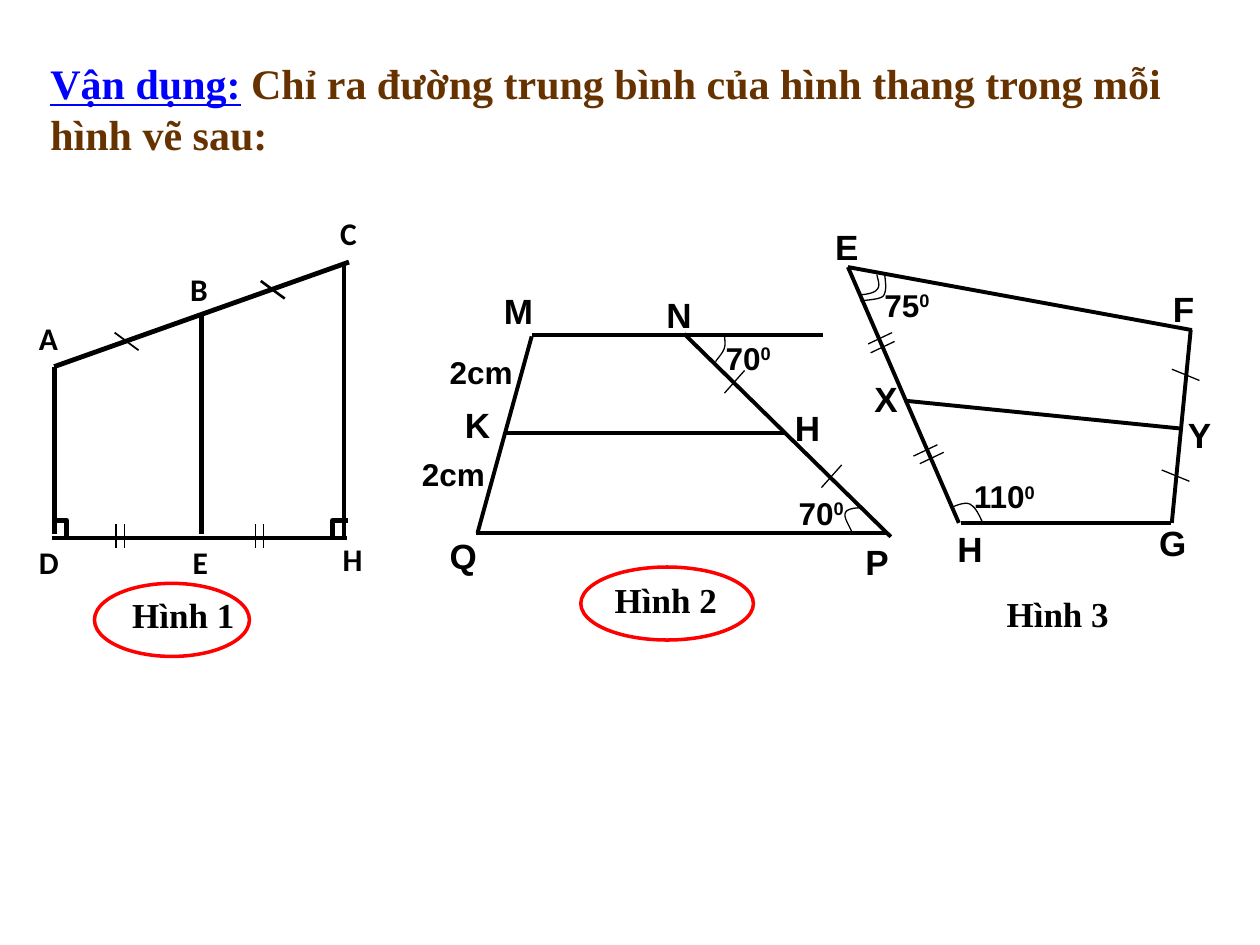
from pptx import Presentation
from pptx.dml.color import RGBColor as RGB
from pptx.enum.shapes import MSO_CONNECTOR as CONN, MSO_SHAPE as SHAPE
from pptx.enum.text import MSO_ANCHOR as ANCHOR, MSO_AUTO_SIZE as FIT, PP_ALIGN as ALIGN
from pptx.oxml.ns import qn
from pptx.util import Inches, Pt
from lxml import etree

C = {"ink": "000000", "blue": "0000FF", "brown": "663300", "red": "FF0000"}

prs = Presentation()
prs.slide_width, prs.slide_height = Inches(10), Inches(7.5)
col, row = prs.slide_width / 10, prs.slide_height / 7.5
s = prs.slides.add_slide(prs.slide_layouts[5])


def add_text(sp, text, size=20, font="Arial", color="ink", underline=None, sup=False):
    tf = sp.text_frame
    tf.word_wrap = True
    tf.auto_size = FIT.NONE
    tf.vertical_anchor = ANCHOR.TOP
    p = tf.paragraphs[0]
    p.alignment = ALIGN.LEFT
    r = p.add_run()
    r.text = text
    f = r.font
    f.name, f.size, f.bold, f.underline = font, Pt(size), True, underline
    f.color.rgb = RGB.from_string(C[color])
    if sup:
        r._r.get_or_add_rPr().set("baseline", "30000")


def add_path(points, width):
    pts = [(round(x * col), round(y * row)) for x, y in points]
    fb = s.shapes.build_freeform(*pts[0], scale=1.0)
    fb.add_line_segments(pts[1:], close=False)
    sp = fb.convert_to_shape()
    sp.shadow.inherit = False
    sp.fill.background()
    sp.line.color.rgb = RGB.from_string(C["ink"])
    sp.line.width = Pt(width)


title = s.shapes.title
title.left, title.top = round(0.3 * col), round(0.41 * row)
title.width, title.height = round(9.05 * col), round(0.91 * row)
add_text(title, "Vận dụng:", size=24, font="Times New Roman", color="blue", underline=True)
add_text(title, " Chỉ ra đường trung bình của hình thang trong mỗi hình vẽ sau:",
         size=24, font="Times New Roman", color="brown")

lines = {
    2.75: [(0.41, 4.27, 2.75, 4.27), (1.6, 2.49, 1.6, 4.24), (0.43, 4.24, 0.43, 2.91),
           (2.73, 4.26, 2.73, 2.09), (0.43, 2.91, 2.77, 2.08)],
    2.25: [(4.22, 2.66, 6.53, 2.66), (4.22, 2.67, 3.79, 4.23), (3.78, 4.23, 7.03, 4.23),
           (5.43, 2.65, 7.07, 4.26), (4.01, 3.44, 6.22, 3.44),
           (7.63, 4.15, 9.29, 4.15), (7.61, 4.15, 6.73, 2.12), (9.3, 4.15, 9.45, 2.62),
           (6.73, 2.12, 9.46, 2.62), (7.18, 3.18, 9.36, 3.4)],
    1.5: [(2.07, 2.23, 2.26, 2.37)],
    1: [(0.91, 2.64, 1.1, 2.78)],
    0.75: [(x, 4.16, x, 4.35) for x in (0.92, 0.99, 2.03, 2.09)]
    + [(x, y, x - 0.16, y + 0.18) for x, y in ((5.91, 2.94), (6.68, 3.69))]
    + [(x, y, x - 0.19, y + 0.09)
       for x, y in ((7.08, 2.64), (7.1, 2.71), (7.44, 3.53), (7.49, 3.59))]
    + [(x, y, x + 0.22, y + 0.09) for x, y in ((9.3, 2.93), (9.22, 3.73))],
}
for width, group in lines.items():
    for x1, y1, x2, y2 in group:
        sp = s.shapes.add_connector(CONN.STRAIGHT, round(x1 * col), round(y1 * row),
                                    round(x2 * col), round(y2 * row))
        sp.line.color.rgb = RGB.from_string(C["ink"])
        sp.line.width = Pt(width)
        etree.SubElement(sp._element.spPr, qn("a:effectLst"))

add_path([(0.41, 4.13), (0.53, 4.13), (0.53, 4.25)], 2.75)
add_path([(2.64, 4.25), (2.64, 4.13), (2.76, 4.13)], 2.75)

arcs = [
    [(5.75, 2.65), (5.75, 2.69), (5.76, 2.73), (5.75, 2.76), (5.74, 2.8), (5.69, 2.85), (5.68, 2.87)],
    [(6.84, 4.03), (6.78, 4.03), (6.72, 4.04), (6.71, 4.07), (6.69, 4.1), (6.75, 4.19), (6.76, 4.22)],
    [(7.57, 4.02), (7.62, 4), (7.68, 3.98), (7.71, 4.01), (7.75, 4.03), (7.79, 4.13), (7.8, 4.15)],
    [(6.96, 2.18), (6.97, 2.23), (6.99, 2.27), (6.96, 2.3), (6.94, 2.33), (6.85, 2.34), (6.83, 2.34)],
    [(7.02, 2.17), (7.03, 2.24), (7.04, 2.31), (7.01, 2.35), (6.98, 2.38), (6.86, 2.38), (6.83, 2.39)],
]
steps = 10
for arc in arcs:
    pts = [arc[0]]
    for i in (0, 3):
        for n in range(1, steps + 1):
            t = n / steps
            weights = ((1 - t) ** 3, 3 * t * (1 - t) ** 2, 3 * t * t * (1 - t), t ** 3)
            pts.append(tuple(sum(w * pt[k] for w, pt in zip(weights, arc[i:i + 4]))
                             for k in (0, 1)))
    add_path(pts, 0.75)

labels = [
    ("Calibri", 18, 0.38, 0.4, [
        ("A", 0.21, 2.48), ("B", 1.41, 2.09), ("C", 2.6, 1.65),
        ("H", 2.62, 4.24), ("E", 1.43, 4.26), ("D", 0.21, 4.26)]),
    ("Arial", 20, 0.62, 0.43, [
        ("M", 3.9, 2.25), ("N", 5.19, 2.28), ("P", 6.77, 4.24),
        ("Q", 3.47, 4.19), ("K", 3.59, 3.15), ("H", 6.21, 3.18)]),
    ("Arial", 20, 0.72, 0.43, [
        ("E", 6.53, 1.74), ("F", 9.21, 2.23), ("G", 9.1, 4.09),
        ("H", 7.5, 4.14), ("X", 6.84, 2.95), ("Y", 9.33, 3.23)]),
    ("Arial", 18, 0.88, 0.4, [("2cm", 3.47, 2.75), ("2cm", 3.25, 3.56)]),
    ("Times New Roman", 20, 1.28, 0.43, [
        ("Hình 1", 0.95, 4.66), ("Hình 2", 4.78, 4.54), ("Hình 3", 7.89, 4.65)]),
    ("Arial", 18, 0.75, 0.4, [
        ("75°", 6.92, 2.22), ("110°", 7.63, 3.74), ("70°", 5.66, 2.64), ("70°", 6.24, 3.87)]),
]
for font, size, w, h, group in labels:
    for text, x, y in group:
        sp = s.shapes.add_textbox(round(x * col), round(y * row), round(w * col), round(h * row))
        add_text(sp, text.rstrip("°"), size=size, font=font)
        if text.endswith("°"):
            add_text(sp, "0", size=size, font=font, sup=True)

for x, y, w in ((0.75, 4.63, 1.23), (4.61, 4.5, 1.37)):
    sp = s.shapes.add_shape(SHAPE.OVAL, round(x * col), round(y * row),
                            round(w * col), round(0.58 * row))
    sp.shadow.inherit = False
    sp.fill.background()
    sp.line.color.rgb = RGB.from_string(C["red"])
    sp.line.width = Pt(2)

prs.save("out.pptx")
